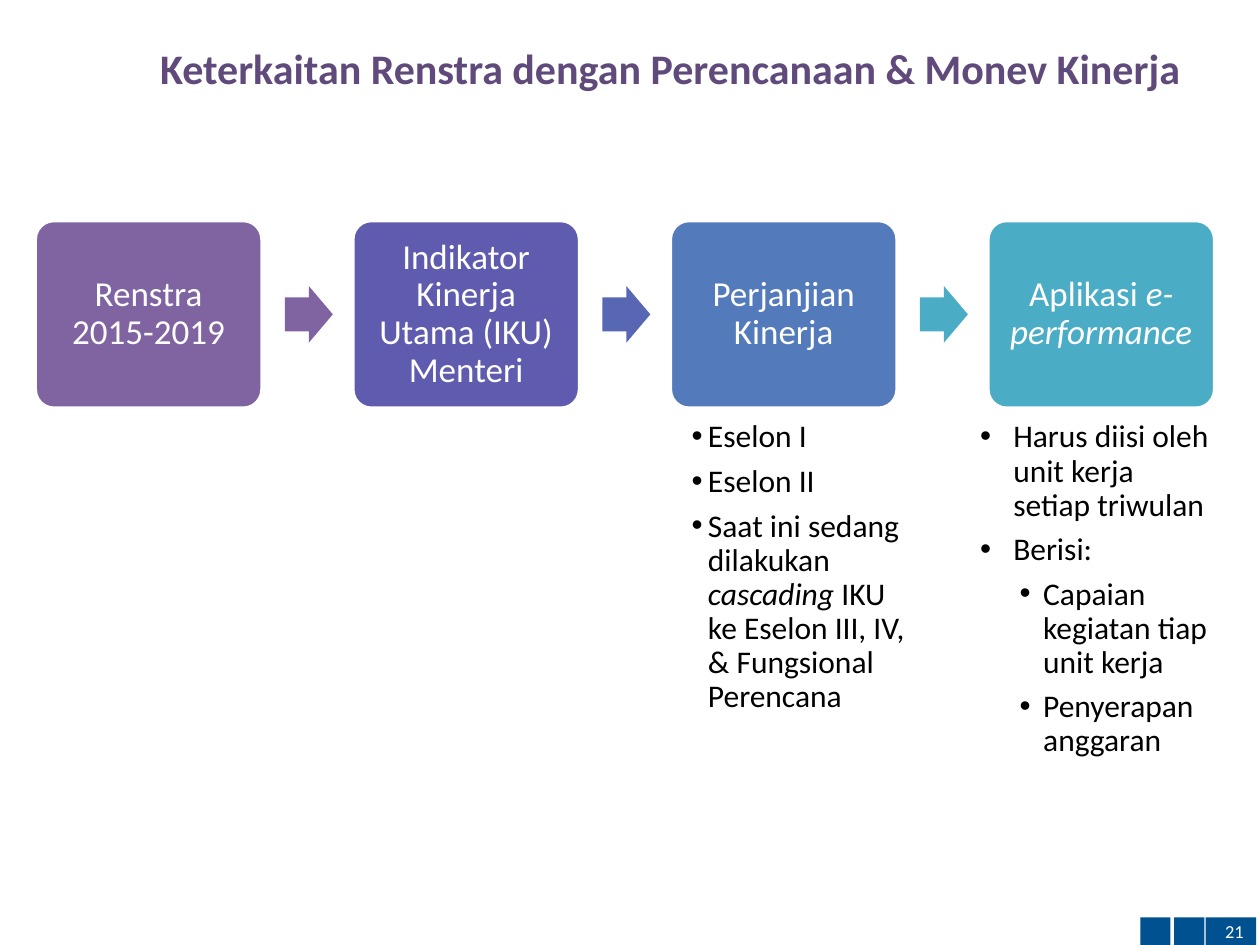
from typing import NamedTuple, Optional

from lxml.etree import SubElement
from pptx import Presentation
from pptx.dml.color import RGBColor
from pptx.enum.shapes import MSO_SHAPE
from pptx.enum.text import MSO_ANCHOR, PP_ALIGN
from pptx.oxml.ns import qn
from pptx.util import Pt

FONT = "Calibri"
WHITE, BLACK, PURPLE, NAVY = "FFFFFF", "000000", "604A7B", "00518F"
STEP_LEFT, STEP_TOP, STEP_WIDTH, STEP_HEIGHT = 20.16, 126, 129.6, 107.3
STEP_PITCH = 181.45
ARROW_WIDTH, ARROW_HEIGHT = 27.4, 32.4
FOOTER_TOP, FOOTER_HEIGHT = 524.2, 15.8


class Step(NamedTuple):
    lines: list[str]
    fill: str
    arrow_fill: Optional[str] = None


class Indent(NamedTuple):
    left: float
    hanging: float


class Bullet(NamedTuple):
    text: str
    indent: Indent
    level: int = 0


NARROW, WIDE, NESTED = Indent(9.4, 9.4), Indent(18.9, 18.9), Indent(36, 13.5)

STEPS = [
    Step(["Renstra", "2015-2019"], "8064A2", "8064A2"),
    Step(["Indikator Kinerja Utama (IKU) Menteri"], "5F5BAE", "5767B4"),
    Step(["Perjanjian Kinerja"], "537ABA", "4BACC6"),
    Step(["Aplikasi *e-performance*"], "4BACC6"),
]
AGREEMENT_NOTES = [
    Bullet("Eselon I", NARROW),
    Bullet("Eselon II", NARROW),
    Bullet("Saat ini sedang dilakukan *cascading* IKU ke Eselon III, IV, "
           "& Fungsional Perencana", NARROW),
]
APPLICATION_NOTES = [
    Bullet("Harus diisi oleh unit kerja setiap triwulan", WIDE),
    Bullet("Berisi:", WIDE),
    Bullet("Capaian kegiatan tiap unit kerja", NESTED, 1),
    Bullet("Penyerapan anggaran", NESTED, 1),
]


def color(value: str) -> RGBColor:
    return RGBColor.from_string(value)


def write(para, text: str, size: float, text_color: str, bold: bool = False) -> None:
    """Fill a paragraph; words between asterisks become italic."""
    for index, part in enumerate(text.split("*")):
        if not part:
            continue
        span = para.add_run()
        span.text = part
        span.font.name = FONT
        span.font.size = Pt(size)
        span.font.bold = bold
        span.font.italic = index % 2 == 1
        span.font.color.rgb = color(text_color)


def paragraph_at(frame, index: int):
    return frame.paragraphs[0] if index == 0 else frame.add_paragraph()


def add_block(slide, kind: MSO_SHAPE, left: float, top: float,
              width: float, height: float, fill: str):
    block = slide.shapes.add_shape(kind, Pt(left), Pt(top), Pt(width), Pt(height))
    block.shadow.inherit = False
    block.fill.solid()
    block.fill.fore_color.rgb = color(fill)
    block.line.fill.background()
    return block


def add_text_box(slide, left: float, top: float, width: float, height: float):
    box = slide.shapes.add_textbox(Pt(left), Pt(top), Pt(width), Pt(height))
    box.text_frame.word_wrap = True
    return box.text_frame


def add_step(slide, left: float, step: Step) -> None:
    block = add_block(slide, MSO_SHAPE.ROUNDED_RECTANGLE, left, STEP_TOP,
                      STEP_WIDTH, STEP_HEIGHT, step.fill)
    block.adjustments[0] = 0.1
    block.line.color.rgb = color(WHITE)
    block.line.width = Pt(2)
    frame = block.text_frame
    frame.word_wrap = True
    frame.vertical_anchor = MSO_ANCHOR.MIDDLE
    frame.margin_left = frame.margin_right = Pt(5.5)
    frame.margin_top = frame.margin_bottom = Pt(5.5)
    for index, line in enumerate(step.lines):
        para = paragraph_at(frame, index)
        para.alignment = PP_ALIGN.CENTER
        para.line_spacing = 0.9
        write(para, line, 20, WHITE)
    if step.arrow_fill:
        arrow = add_block(slide, MSO_SHAPE.RIGHT_ARROW, left + STEP_WIDTH + 13,
                          STEP_TOP + (STEP_HEIGHT - ARROW_HEIGHT) / 2,
                          ARROW_WIDTH, ARROW_HEIGHT, step.arrow_fill)
        arrow.adjustments[0] = 0.6
        arrow.adjustments[1] = 0.5


def add_bullets(slide, left: float, width: float, height: float,
                bullets: list[Bullet]) -> None:
    frame = add_text_box(slide, left, 236.9, width, height)
    for index, bullet in enumerate(bullets):
        para = paragraph_at(frame, index)
        para.level = bullet.level
        properties = para._p.get_or_add_pPr()
        properties.set("marL", str(Pt(bullet.indent.left)))
        properties.set("indent", str(-Pt(bullet.indent.hanging)))
        SubElement(properties, qn("a:buFont"), typeface="Arial")
        SubElement(properties, qn("a:buChar"), char="•")
        para.line_spacing = 0.9
        para.space_after = Pt(6)
        write(para, bullet.text, 18, BLACK)


def add_footer(slide, number: str) -> None:
    for left, width in ((651.6, 17.3), (671, 17.3)):
        add_block(slide, MSO_SHAPE.RECTANGLE, left, FOOTER_TOP, width, FOOTER_HEIGHT, NAVY)
    number_block = add_block(slide, MSO_SHAPE.RECTANGLE, 689, FOOTER_TOP,
                             28.8, FOOTER_HEIGHT, NAVY)
    frame = number_block.text_frame
    frame.vertical_anchor = MSO_ANCHOR.MIDDLE
    frame.paragraphs[0].alignment = PP_ALIGN.RIGHT
    write(frame.paragraphs[0], number, 10.5, WHITE)


def main() -> None:
    deck = Presentation()
    deck.slide_width, deck.slide_height = Pt(720), Pt(540)
    page = deck.slides.add_slide(deck.slide_layouts[6])

    add_footer(page, "21")
    for index, step in enumerate(STEPS):
        add_step(page, STEP_LEFT + index * STEP_PITCH, step)
    add_bullets(page, 388.1, 141.8, 181.4, AGREEMENT_NOTES)
    add_bullets(page, 553, 147.6, 202.3, APPLICATION_NOTES)

    title = add_text_box(page, 65.5, 20.9, 635, 36).paragraphs[0]
    title.alignment = PP_ALIGN.CENTER
    write(title, "Keterkaitan Renstra dengan Perencanaan & Monev Kinerja",
          24, PURPLE, bold=True)

    deck.save("out.pptx")


if __name__ == "__main__":
    main()
